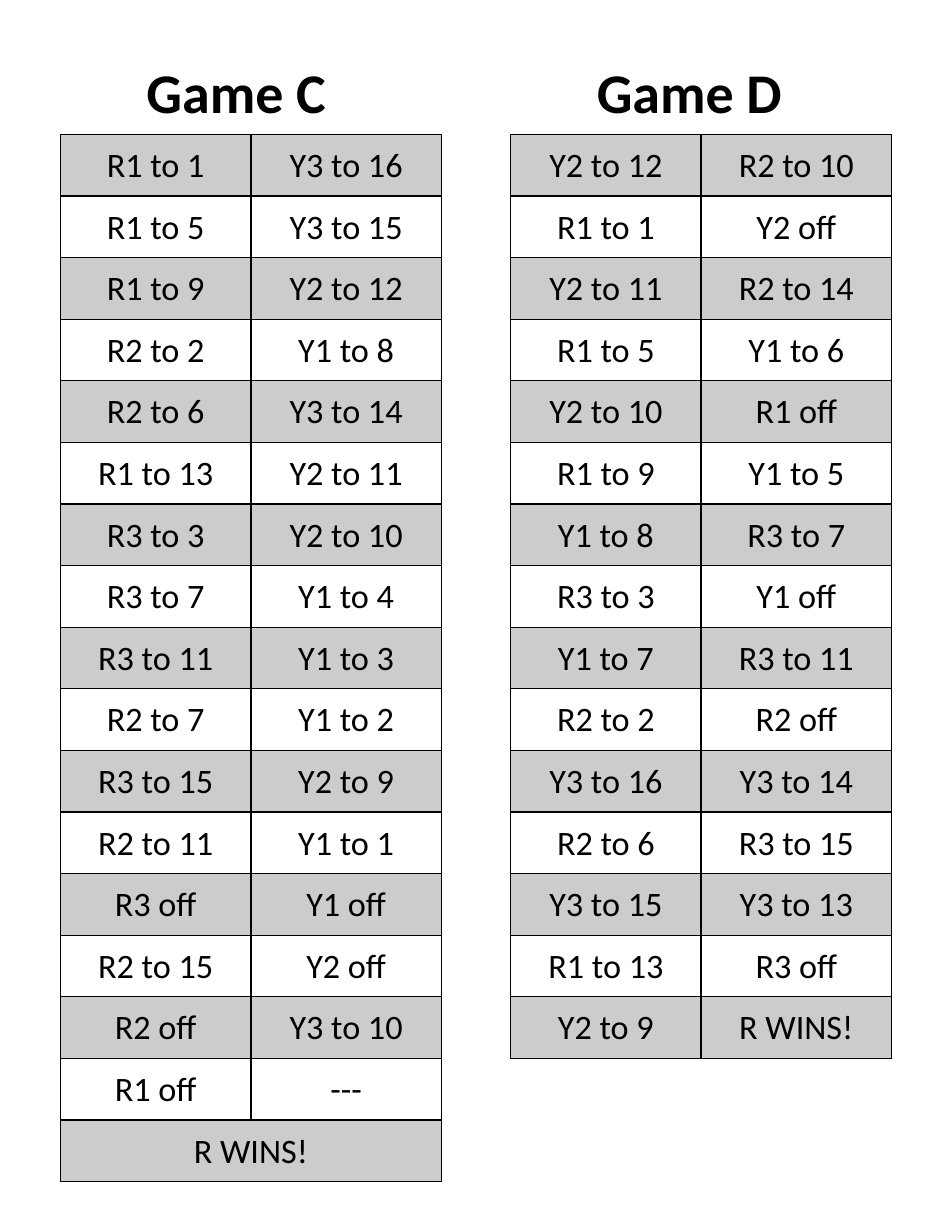
from lxml.etree import SubElement
from pptx import Presentation
from pptx.dml.color import RGBColor as RGB
from pptx.enum.text import MSO_ANCHOR as Anchor, MSO_AUTO_SIZE as Auto, PP_ALIGN as Align
from pptx.oxml.ns import qn
from pptx.util import Inches, Pt

# Content: one pair of moves per row; None joins the cell to its left neighbour
GAMES = [
    {"title": "Game D", "left": 4.56, "wide": 2.08, "moves": [
        ("Y2 to 12", "R2 to 10"), ("R1 to 1", "Y2 off"),
        ("Y2 to 11", "R2 to 14"), ("R1 to 5", "Y1 to 6"),
        ("Y2 to 10", "R1 off"), ("R1 to 9", "Y1 to 5"),
        ("Y1 to 8", "R3 to 7"), ("R3 to 3", "Y1 off"),
        ("Y1 to 7", "R3 to 11"), ("R2 to 2", "R2 off"),
        ("Y3 to 16", "Y3 to 14"), ("R2 to 6", "R3 to 15"),
        ("Y3 to 15", "Y3 to 13"), ("R1 to 13", "R3 off"),
        ("Y2 to 9", "R WINS!")]},
    {"title": "Game C", "left": 0.54, "wide": 2.06, "moves": [
        ("R1 to 1", "Y3 to 16"), ("R1 to 5", "Y3 to 15"),
        ("R1 to 9", "Y2 to 12"), ("R2 to 2", "Y1 to 8"),
        ("R2 to 6", "Y3 to 14"), ("R1 to 13", "Y2 to 11"),
        ("R3 to 3", "Y2 to 10"), ("R3 to 7", "Y1 to 4"),
        ("R3 to 11", "Y1 to 3"), ("R2 to 7", "Y1 to 2"),
        ("R3 to 15", "Y2 to 9"), ("R2 to 11", "Y1 to 1"),
        ("R3 off", "Y1 off"), ("R2 to 15", "Y2 off"),
        ("R2 off", "Y3 to 10"), ("R1 off", "---"),
        ("R WINS!", None)]},
]
COLORS = {"ink": "000000", "line": "000000", "band": "000000"}
FONT = "Calibri"
COL, ROW, TOP = 1.7, 0.55, 1.2
TITLE_TOP, TITLE_HIGH, TITLE_IN = 0.46, 0.71, 0.67


def write(frame, text, size, bold=False, align=Align.LEFT):
    para = frame.paragraphs[0]
    para.alignment = align
    run = para.add_run()
    run.text = text
    font = run.font
    font.name, font.size, font.bold = FONT, Pt(size), bold
    font.color.rgb = RGB.from_string(COLORS["ink"])


def border(cell):
    props = cell._tc.get_or_add_tcPr()
    for side in ("a:lnL", "a:lnR", "a:lnT", "a:lnB"):
        line = SubElement(props, qn(side), w=str(Pt(1)))
        fill = SubElement(line, qn("a:solidFill"))
        SubElement(fill, qn("a:srgbClr"), val=COLORS["line"])


def shade(cell, banded):
    if not banded:
        cell.fill.background()
        return
    cell.fill.solid()
    cell.fill.fore_color.rgb = RGB.from_string(COLORS["band"])
    tint = cell._tc.tcPr.find(qn("a:solidFill"))[0]
    SubElement(tint, qn("a:alpha"), val="20000")


def add_moves(slide, left, moves):
    table = slide.shapes.add_table(
        len(moves), 2, Inches(left), Inches(TOP),
        Inches(2 * COL), Inches(ROW * len(moves))).table
    table.first_row = table.horz_banding = False
    for col in table.columns:
        col.width = Inches(COL)
    for r, pair in enumerate(moves):
        table.rows[r].height = Inches(ROW)
        for c, text in enumerate(pair):
            cell = table.cell(r, c)
            cell.vertical_anchor = Anchor.MIDDLE
            cell.margin_left = cell.margin_right = cell.margin_top = Inches(0.01)
            cell.margin_bottom = 0
            border(cell)
            shade(cell, r % 2 == 0)
            if text is None:
                table.cell(r, c - 1).merge(cell)
            else:
                write(cell.text_frame, text, 22, align=Align.CENTER)


def add_title(slide, left, wide, text):
    box = slide.shapes.add_textbox(
        Inches(left + TITLE_IN), Inches(TITLE_TOP), Inches(wide), Inches(TITLE_HIGH))
    box.text_frame.word_wrap = False
    box.text_frame.auto_size = Auto.SHAPE_TO_FIT_TEXT
    write(box.text_frame, text, 36, bold=True)


def main():
    prs = Presentation()
    prs.slide_width, prs.slide_height = Inches(8.5), Inches(11)
    slide = prs.slides.add_slide(prs.slide_layouts[6])
    for game in GAMES:
        add_moves(slide, game["left"], game["moves"])
        add_title(slide, game["left"], game["wide"], game["title"])
    prs.save("out.pptx")


if __name__ == "__main__":
    main()
